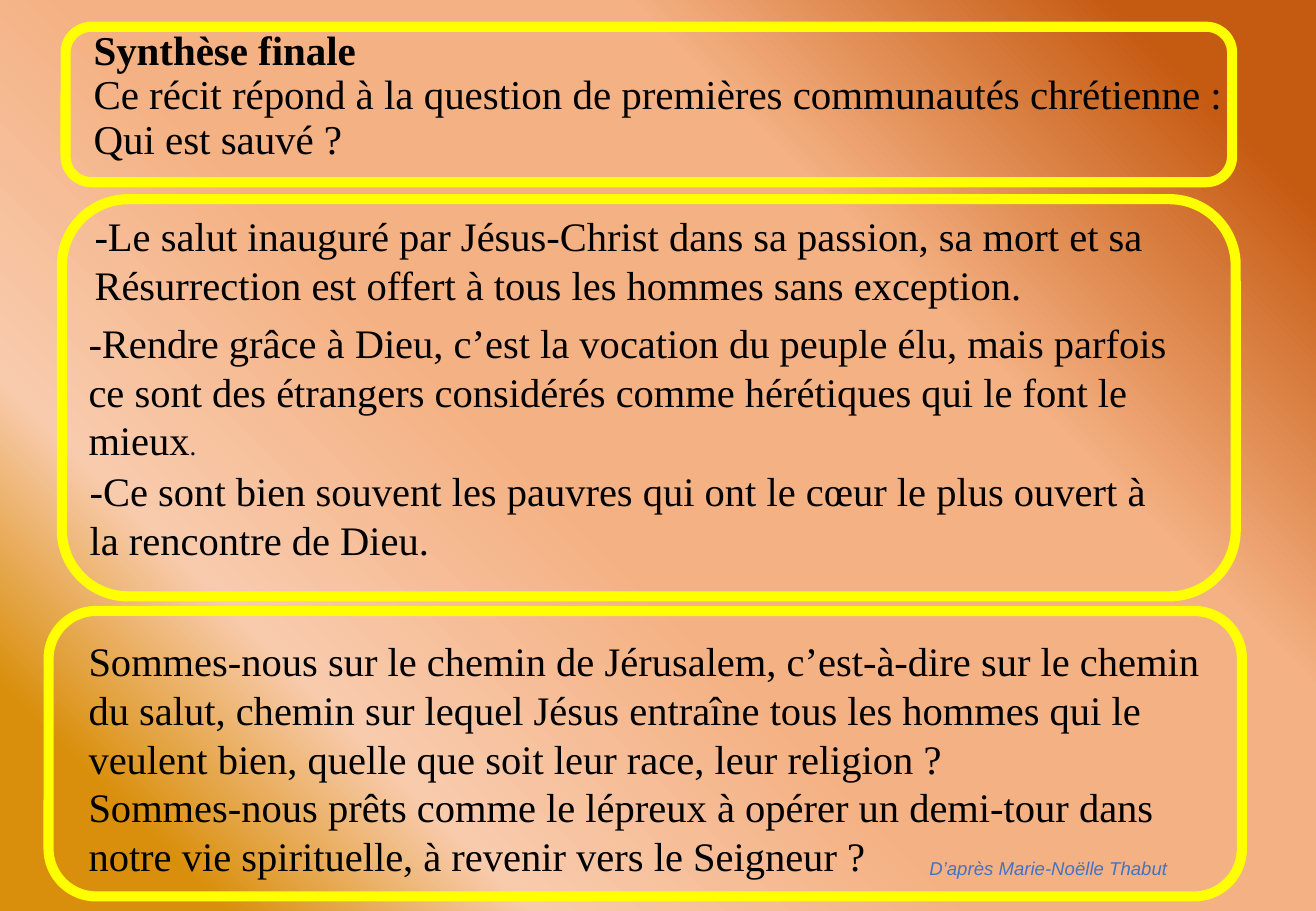
from lxml.etree import SubElement
from pptx import Presentation
from pptx.dml.color import RGBColor
from pptx.enum.shapes import MSO_SHAPE
from pptx.enum.text import MSO_ANCHOR, PP_ALIGN
from pptx.oxml.ns import qn
from pptx.util import Inches, Pt


def color(hex_string):
    return RGBColor.from_string(hex_string)


class SlideBuilder:
    text_font = "Times New Roman"
    text_size = 24
    text_color = "000000"
    frame_color = "FFFF00"
    frame_width = 6

    def __init__(self, presentation):
        # Layout 5 is "Title Only"
        self.slide = presentation.slides.add_slide(presentation.slide_layouts[5])

    def background(self, stops, angle):
        fill = self.slide.background.fill
        fill.gradient()
        fill.gradient_angle = angle
        stop_list = self.slide.element.find(".//" + qn("a:gsLst"))
        for old_stop in list(stop_list):
            stop_list.remove(old_stop)
        for percent, hex_string in stops:
            stop = SubElement(stop_list, qn("a:gs"), pos=str(percent * 1000))
            SubElement(stop, qn("a:srgbClr"), val=hex_string)

    def add_run(self, paragraph, text, size=None, font=None, hex_string=None,
                bold=False, italic=False):
        run = paragraph.add_run()
        run.text = text
        run.font.name = font or self.text_font
        run.font.size = Pt(size or self.text_size)
        run.font.color.rgb = color(hex_string or self.text_color)
        run.font.bold = bold
        run.font.italic = italic

    def title(self, left, top, width, height, heading, lines, size):
        shape = self.slide.shapes.title
        shape.left, shape.top = Inches(left), Inches(top)
        shape.width, shape.height = Inches(width), Inches(height)
        frame = shape.text_frame
        frame.word_wrap = True
        frame.vertical_anchor = MSO_ANCHOR.MIDDLE
        paragraph = frame.paragraphs[0]
        paragraph.alignment = PP_ALIGN.LEFT
        paragraph.line_spacing = 0.9
        paragraph.space_before = Pt(0)
        self.add_run(paragraph, heading, size, bold=True)
        for line in lines:
            paragraph.add_line_break()
            self.add_run(paragraph, line, size)

    def text(self, left, top, width, height, *paragraphs):
        """Each paragraph is a list of (text, run style) pairs."""
        box = self.slide.shapes.add_textbox(
            Inches(left), Inches(top), Inches(width), Inches(height))
        frame = box.text_frame
        frame.word_wrap = True
        for index, runs in enumerate(paragraphs):
            paragraph = frame.add_paragraph() if index else frame.paragraphs[0]
            for text, style in runs:
                self.add_run(paragraph, text, **style)

    def rounded_frame(self, left, top, width, height):
        shape = self.slide.shapes.add_shape(
            MSO_SHAPE.ROUNDED_RECTANGLE,
            Inches(left), Inches(top), Inches(width), Inches(height))
        shape.shadow.inherit = False
        shape.fill.background()
        shape.line.color.rgb = color(self.frame_color)
        shape.line.width = Pt(self.frame_width)


def main():
    presentation = Presentation()
    presentation.slide_width = Inches(10.83)
    presentation.slide_height = Inches(7.5)
    builder = SlideBuilder(presentation)

    # Diagonal gradient from top right to bottom left
    builder.background([(9, "C55A11"), (31, "F4B183"), (56, "F4B183"),
                        (76, "F8CBAD"), (90, "D98F0B")], angle=225)

    # Question
    builder.title(0.67, 0.25, 9.6, 1.09, "Synthèse finale",
                  ["Ce récit répond à la question de premières communautés chrétienne :",
                   "Qui est sauvé ?"], size=24.3)
    builder.rounded_frame(0.54, 0.22, 9.6, 1.28)

    # Answers
    builder.text(0.68, 1.69, 9.57, 0.91, [
        ("-Le salut inauguré par Jésus-Christ dans sa passion, sa mort et sa "
         "Résurrection est offert à tous les hommes sans exception.", {})])
    builder.text(0.63, 2.57, 9.19, 1.31, [
        ("-Rendre grâce à Dieu, c’est la vocation du peuple élu, mais parfois "
         "ce sont des étrangers considérés comme hérétiques qui le font le mieux", {}),
        (".", {"size": 16})])
    builder.text(0.64, 3.79, 8.9, 0.91, [
        ("-Ce sont bien souvent les pauvres qui ont le cœur le plus ouvert à "
         "la rencontre de Dieu.", {})])
    builder.rounded_frame(0.51, 1.64, 9.66, 3.27)

    # Questions for today
    builder.text(
        0.63, 5.19, 9.51, 2.12,
        [("Sommes-nous sur le chemin de Jérusalem, c’est-à-dire sur le chemin "
          "du salut, chemin sur lequel Jésus entraîne tous les hommes qui le "
          "veulent bien, quelle que soit leur race, leur religion ?", {})],
        [("Sommes-nous prêts comme le lépreux à opérer un demi-tour dans "
          "notre vie spirituelle, à revenir vers le Seigneur ?", {})])
    builder.rounded_frame(0.4, 5.03, 9.82, 2.35)

    # Source
    builder.text(7.55, 7.01, 2.6, 0.28, [
        ("D’après Marie-Noëlle Thabut",
         {"size": 11, "font": "Arial", "hex_string": "4472C4", "italic": True})])

    presentation.save("out.pptx")


if __name__ == "__main__":
    main()
